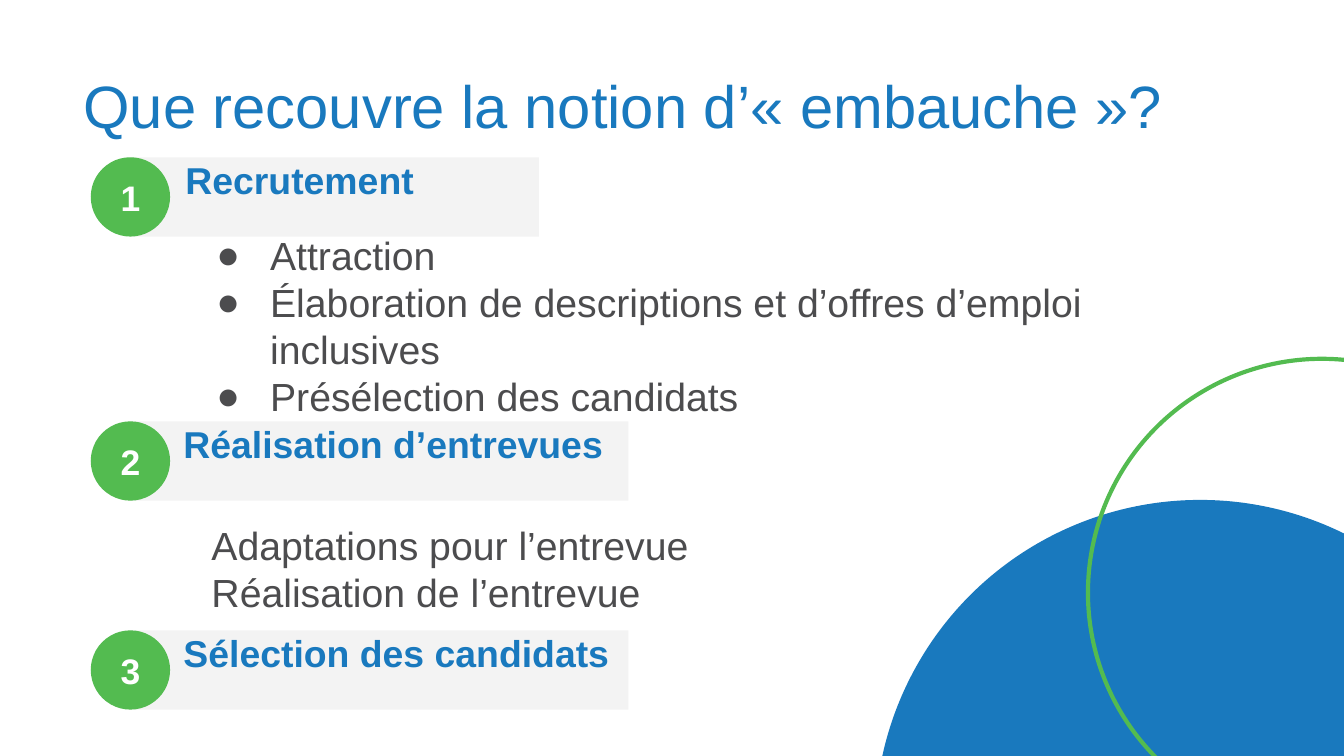
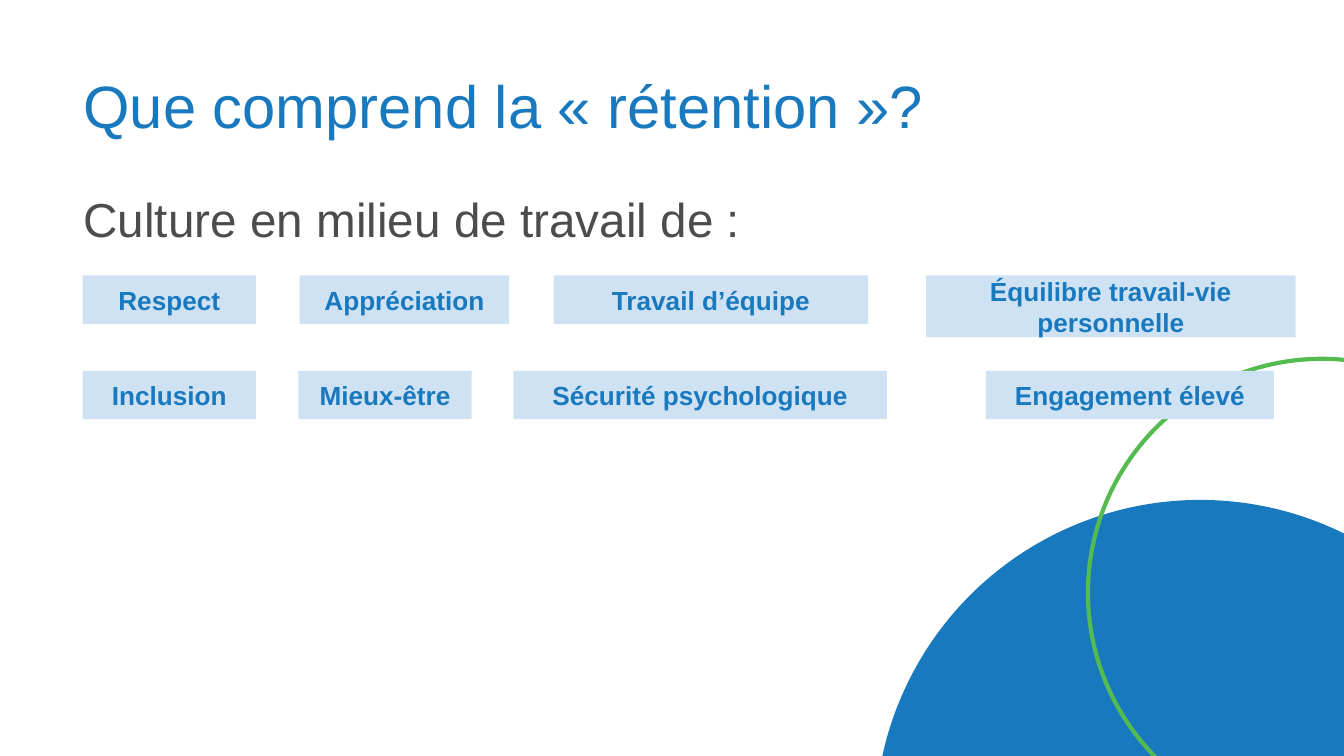
"""Build two slides on hiring and retention."""
from lxml import etree
from pptx import Presentation
from pptx.dml.color import RGBColor
from pptx.enum.shapes import MSO_SHAPE
from pptx.enum.text import MSO_ANCHOR, MSO_AUTO_SIZE, PP_ALIGN
from pptx.oxml.ns import qn
from pptx.util import Pt

RECT, OVAL = MSO_SHAPE.RECTANGLE, MSO_SHAPE.OVAL
TOP, MID = MSO_ANCHOR.TOP, MSO_ANCHOR.MIDDLE
LEFT, CENTER = PP_ALIGN.LEFT, PP_ALIGN.CENTER
FIXED = MSO_AUTO_SIZE.NONE
PX = 4572
BLUE, GREEN, GREY = "1979BE", "53BB50", "4C4C4E"
PALE, SKY, WHITE = "F3F3F3", "CFE2F3", "FFFFFF"
rgb = RGBColor.from_string


def draw(slide, kind, box, fill=None, line=None):
    shape = slide.shapes.add_shape(kind, *[n * PX for n in box])
    shape.shadow.inherit = False
    if fill:
        shape.fill.solid()
        shape.fill.fore_color.rgb = rgb(fill)
    else:
        shape.fill.background()
    if line:
        shape.line.color.rgb = rgb(line)
        shape.line.width = Pt(2.25)
    else:
        shape.line.fill.background()
    return shape


def write(shape, lines, size, color, pads, anchor=TOP, align=LEFT,
          bold=False, space=1.0, mark=None):
    frame = shape.text_frame
    frame.word_wrap, frame.auto_size = True, FIXED
    frame.vertical_anchor = anchor
    frame.margin_left, frame.margin_top, frame.margin_right, frame.margin_bottom = [
        n * PX for n in pads]
    for i, line in enumerate(lines):
        para = frame.add_paragraph() if i else frame.paragraphs[0]
        props = para._p.get_or_add_pPr()
        props.set("marL", str(100 * PX if mark else 0))
        props.set("indent", str(-80 * PX if mark else 0))
        if mark:
            tint = etree.SubElement(props, qn("a:buClr"))
            etree.SubElement(tint, qn("a:srgbClr"), val=color)
            etree.SubElement(props, qn("a:buFont"), typeface="Arial")
            etree.SubElement(props, qn("a:buChar"), char=mark)
        else:
            etree.SubElement(props, qn("a:buNone"))
        para.alignment, para.line_spacing = align, space
        para.space_before = para.space_after = Pt(0)
        run = para.add_run()
        run.text = line
        run.font.name, run.font.size, run.font.bold = "Arial", Pt(size), bold
        run.font.color.rgb = rgb(color)


deck = Presentation()
deck.slide_width, deck.slide_height = 2000 * PX, 1125 * PX
layout = deck.slide_layouts[1]

pages = [
    ("Que recouvre la notion d’« embauche »?", (282, 324, 1518, 252),
     ["Attraction",
      "Élaboration de descriptions et d’offres d’emploi inclusives",
      "Présélection des candidats"], 21, 20, "●"),
    ("Que comprend la « rétention »?", (104, 272, 1670, 756),
     ["Culture en milieu de travail de :"], 25.5, 10, None),
]
slides = []
for head, box, lines, size, pad, mark in pages:
    slide = deck.slides.add_slide(layout)
    title, body = slide.placeholders
    for holder, spot in ((title, (104, 54, 1724, 218)), (body, box)):
        holder.left, holder.top, holder.width, holder.height = [n * PX for n in spot]
    write(title, [head], 32, BLUE, (20, 10, 20, 10), MID, space=0.9)
    write(body, lines, size, GREY, (20, pad, 20, pad), mark=mark)
    slides.append(slide)
hire, keep = slides

rings = [((1302, 744, 968, 968), BLUE, None), ((1619, 534, 696, 696), None, GREEN)]
for i, (box, fill, line) in enumerate(rings):
    ring = draw(hire, OVAL, box, fill, line).element
    ring.nvSpPr.cNvPr.id = 20 + i
    layout.shapes.element.insert(2 + i, ring)

steps = [
    ("Recrutement", 194, 234, 608),
    ("Réalisation d’entrevues", 191, 627, 744),
    ("Sélection des candidats", 191, 938, 744),
]
for i, (name, left, top, width) in enumerate(steps, 1):
    bar = draw(hire, RECT, (left, top, width, 118), PALE)
    write(bar, [name], 20, BLUE, (82, 0, 20, 0), bold=True)
    disc = draw(hire, OVAL, (135, top, 118, 118), GREEN)
    write(disc, [str(i)], 19, WHITE, (0, 0, 0, 0), MID, CENTER, True)

notes = hire.shapes.add_textbox(295 * PX, 756 * PX, 994 * PX, 182 * PX)
write(notes, ["Adaptations pour l’entrevue", "Réalisation de l’entrevue"],
      21, GREY, (20, 20, 20, 20))

rows = {
    410: [("Respect", 123, 258, 72), ("Appréciation", 446, 312, 72),
          ("Travail d’équipe", 824, 468, 72),
          ("Équilibre travail-vie personnelle", 1378, 550, 92)],
    552: [("Inclusion", 123, 258, 72), ("Mieux-être", 444, 258, 72),
          ("Sécurité psychologique", 764, 556, 72),
          ("Engagement élevé", 1467, 429, 72)],
}
for top, tags in rows.items():
    for name, left, width, height in tags:
        tag = draw(keep, RECT, (left, top, width, height), SKY)
        write(tag, [name], 14, BLUE, (20, 20, 20, 20), MID, CENTER, True)

deck.save("out.pptx")
